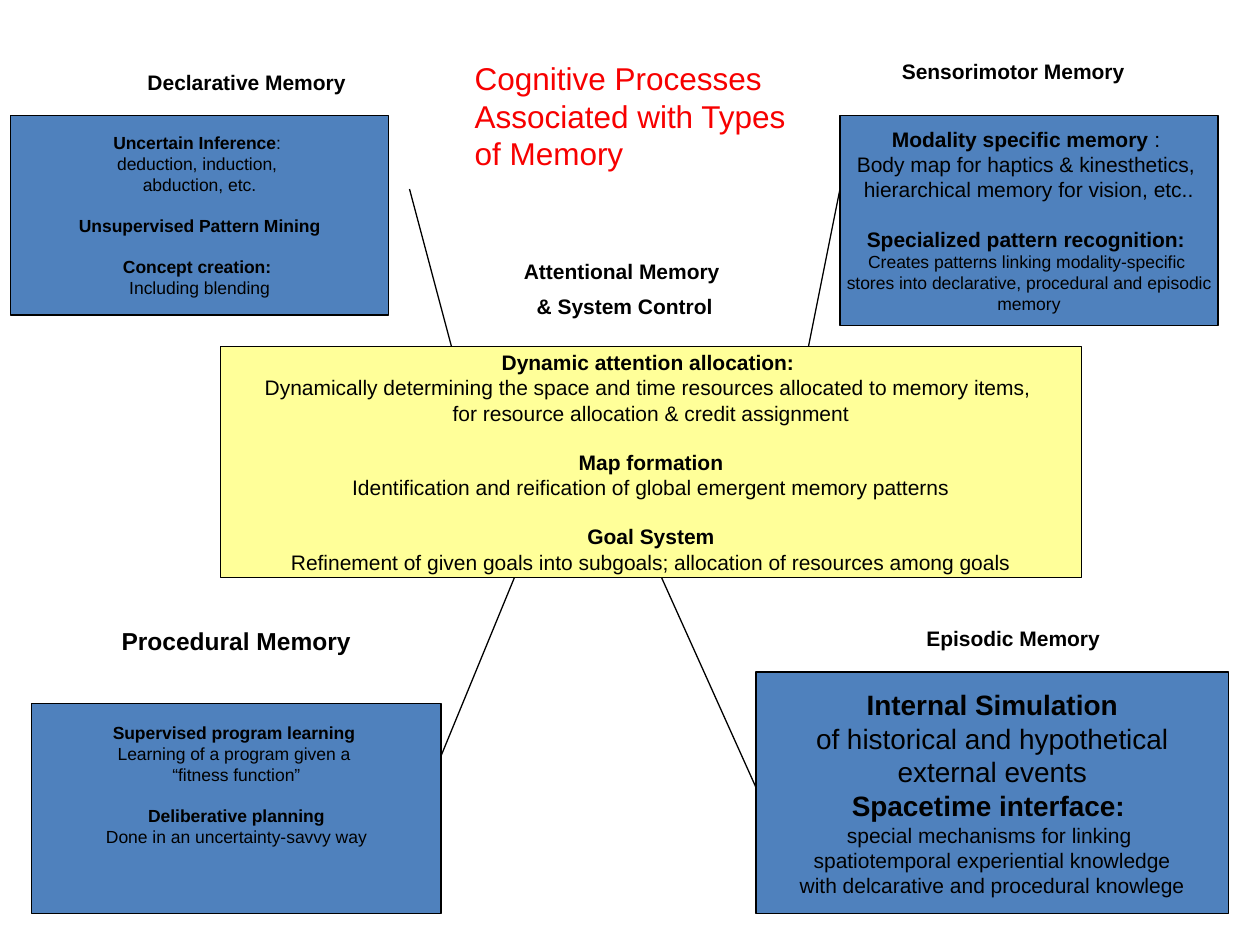
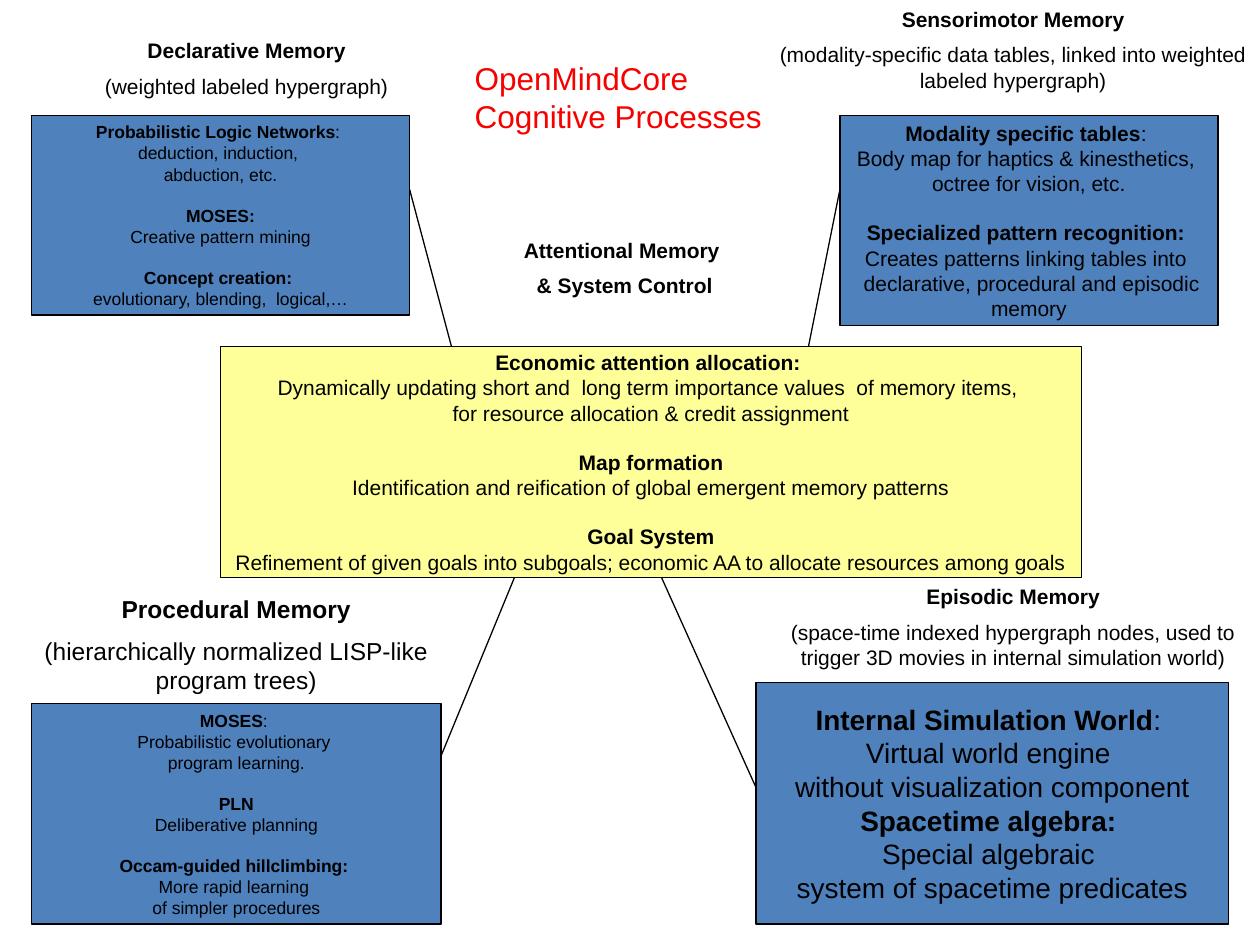
from pptx import Presentation
from pptx.dml.color import RGBColor
from pptx.enum.shapes import MSO_CONNECTOR, MSO_SHAPE
from pptx.enum.text import MSO_ANCHOR, MSO_AUTO_SIZE, PP_ALIGN
from pptx.oxml.ns import qn
from pptx.util import Inches, Pt
from lxml import etree

RECT, STRAIGHT = MSO_SHAPE.RECTANGLE, MSO_CONNECTOR.STRAIGHT
TOP, MIDDLE = MSO_ANCHOR.TOP, MSO_ANCHOR.MIDDLE
LEFT, CENTER = PP_ALIGN.LEFT, PP_ALIGN.CENTER
NO_FIT = MSO_AUTO_SIZE.NONE

BLACK = RGBColor(0x00, 0x00, 0x00)
RED = RGBColor(0xF7, 0x00, 0x00)
BLUE = RGBColor(0x4F, 0x81, 0xBD)
YELLOW = RGBColor(0xFF, 0xFF, 0x99)
FONT = "Arial"
LINE_HEIGHT = 1.15  # height of a text line as a share of its font size
TITLE_AT = (44, 5, 33, 12)
# Links from the central box to the four memory boxes
LINKS = [(42, 72, 49, 55), (63, 55, 72, 75), (39, 18, 43, 33), (77, 33, 80, 18)]

prs = Presentation()
prs.slide_width, prs.slide_height = Inches(10), Inches(7.5)
CELL = prs.slide_width // 120  # the slide is a grid of 120 columns and 90 rows


def grid(*cells):
    return [c * CELL for c in cells]


def write(p, text, size, bold=False, color=BLACK, align=CENTER):
    r = p.add_run()
    r.text = text
    r.font.name, r.font.size, r.font.bold = FONT, Pt(size), bold
    r.font.color.rgb = color
    p.alignment = align


# Labels: place, size, lines (lines in brackets are not bold)
# Boxes: place, fill, heading size, body size, blank line between groups,
# extra bottom margin in points, groups of (heading, plain tail, body lines)
SLIDES = [
    {
        "title": "Cognitive Processes Associated with Types of Memory",
        "labels": [
            ((0, 6, 47, 11), 12, ["Declarative Memory"]),
            ((3, 59, 39, 11), 14, ["Procedural Memory"]),
            ((73, 59, 47, 11), 12, ["Episodic Memory"]),
            ((73, 5, 47, 11), 12, ["Sensorimotor Memory"]),
            ((44, 24, 31, 18), 12, ["Attentional Memory ", "& System Control"]),
        ],
        "boxes": [
            ((1, 11, 36, 19), BLUE, 10, [10, 10, 10], True, 0, [
                ("Uncertain Inference", ": ",
                 ["deduction, induction, ", "abduction, etc."]),
                ("Unsupervised Pattern Mining", "", []),
                ("Concept creation: ", "", ["Including blending"]),
            ]),
            ((3, 67, 39, 20), BLUE, 10, [10, 10], True, 24 * LINE_HEIGHT, [
                ("Supervised program learning ", "",
                 ["Learning of a program given a ", "“fitness function”"]),
                ("Deliberative planning", "", ["Done in an uncertainty-savvy way"]),
            ]),
            ((72, 64, 45, 23), BLUE, 16, [16, 12], False, 0, [
                ("Internal Simulation", "",
                 ["of historical and hypothetical", "external events"]),
                ("Spacetime interface: ", "",
                 ["special mechanisms for linking ",
                  "spatiotemporal experiential knowledge",
                  "with delcarative and procedural knowlege"]),
            ]),
            ((21, 33, 82, 22), YELLOW, 12, [12, 12, 12], True, 0, [
                ("Dynamic attention allocation: ", "",
                 ["Dynamically determining the space and time resources "
                  "allocated to memory items, ",
                  "for resource allocation & credit assignment"]),
                ("Map formation", "",
                 ["Identification and reification of global emergent memory patterns"]),
                ("Goal System", "",
                 ["Refinement of given goals into subgoals; "
                  "allocation of resources among goals"]),
            ]),
            ((80, 11, 36, 20), BLUE, 12, [12, 10], True, 0, [
                ("Modality specific memory ", ": ",
                 ["Body map for haptics & kinesthetics, ",
                  "hierarchical memory for vision, etc.."]),
                ("Specialized pattern recognition: ", "",
                 ["Creates patterns linking modality-specific ",
                  "stores into declarative, procedural and episodic", "memory"]),
            ]),
        ],
    },
    {
        "title": "OpenMindCore Cognitive Processes",
        "labels": [
            ((0, 3, 47, 7), 12, ["Declarative Memory", "(weighted labeled hypergraph)"]),
            ((3, 56, 39, 11), 14,
             ["Procedural Memory", "(hierarchically normalized LISP-like program trees)"]),
            ((73, 55, 47, 10), 12,
             ["Episodic Memory", "(space-time indexed hypergraph nodes, used to "
              "trigger 3D movies in internal simulation world)"]),
            ((73, 0, 47, 10), 12,
             ["Sensorimotor Memory", "(modality-specific data tables, linked into "
              "weighted labeled hypergraph)"]),
            ((44, 22, 31, 18), 12, ["Attentional Memory ", "& System Control"]),
        ],
        "boxes": [
            ((3, 11, 36, 19), BLUE, 10, [10, 10, 10], True, 0, [
                ("Probabilistic Logic Networks", ": ",
                 ["deduction, induction, ", "abduction, etc."]),
                ("MOSES:", "", ["Creative pattern mining"]),
                ("Concept creation: ", "", ["evolutionary, blending,  logical,…"]),
            ]),
            ((3, 67, 39, 21), BLUE, 10, [10, 10, 10], True, 0, [
                ("MOSES", ": ", ["Probabilistic evolutionary ", "program learning."]),
                ("PLN", "", ["Deliberative planning"]),
                ("Occam-guided hillclimbing: ", "",
                 ["More rapid learning ", "of simpler procedures"]),
            ]),
            ((72, 65, 45, 23), BLUE, 16, [16, 16], False, 0, [
                ("Internal Simulation World", ": ",
                 ["Virtual world engine ", "without visualization component"]),
                ("Spacetime algebra: ", "",
                 ["Special algebraic ", "system of spacetime predicates"]),
            ]),
            ((21, 33, 82, 22), YELLOW, 12, [12, 12, 12], True, 0, [
                ("Economic attention allocation: ", "",
                 ["Dynamically updating short and  long term importance values "
                  " of memory items, ",
                  "for resource allocation & credit assignment"]),
                ("Map formation", "",
                 ["Identification and reification of global emergent memory patterns"]),
                ("Goal System", "",
                 ["Refinement of given goals into subgoals; "
                  "economic AA to allocate resources among goals"]),
            ]),
            ((80, 11, 36, 20), BLUE, 12, [12, 12], True, 0, [
                ("Modality specific tables", ": ",
                 ["Body map for haptics & kinesthetics, ", "octree for vision, etc."]),
                ("Specialized pattern recognition: ", "",
                 ["Creates patterns linking tables into ",
                  " declarative, procedural and episodic", "memory"]),
            ]),
        ],
    },
]

for content in SLIDES:
    s = prs.slides.add_slide(prs.slide_layouts[5])

    # Title
    title = s.shapes.title
    title.left, title.top, title.width, title.height = grid(*TITLE_AT)
    tf = title.text_frame
    tf.auto_size, tf.vertical_anchor = NO_FIT, TOP
    write(tf.paragraphs[0], content["title"], 18, color=RED, align=LEFT)

    # Links
    for ends in LINKS:
        link = s.shapes.add_connector(STRAIGHT, *grid(*ends))
        link.line.color.rgb, link.line.width = BLACK, Pt(0.75)
        etree.SubElement(link._element.spPr, qn("a:effectLst"))

    # Memory boxes
    for at, fill, head_size, body_sizes, gap, bottom, groups in content["boxes"]:
        sp = s.shapes.add_shape(RECT, *grid(*at))
        sp.shadow.inherit = False
        sp.fill.solid()
        sp.fill.fore_color.rgb = fill
        sp.line.color.rgb, sp.line.width = BLACK, Pt(0.75)
        tf = sp.text_frame
        tf.word_wrap, tf.vertical_anchor = False, MIDDLE
        tf.margin_bottom = Inches(0.05) + Pt(bottom)
        for i, (heading, tail, body) in enumerate(groups):
            p = tf.add_paragraph() if i else tf.paragraphs[0]
            write(p, heading, head_size, bold=True)
            if tail:
                write(p, tail, head_size)
            if gap and i:
                p.space_before = Pt(body_sizes[0] * LINE_HEIGHT)
            for line in body:
                write(tf.add_paragraph(), line, body_sizes[i])

    # Memory labels
    for at, size, lines in content["labels"]:
        tf = s.shapes.add_textbox(*grid(*at)).text_frame
        tf.word_wrap = True
        for i, line in enumerate(lines):
            p = tf.add_paragraph() if i else tf.paragraphs[0]
            write(p, line, size, bold=not line.startswith("("))
            p.space_before = Pt(size / 2 if i else 0)

prs.save("out.pptx")
